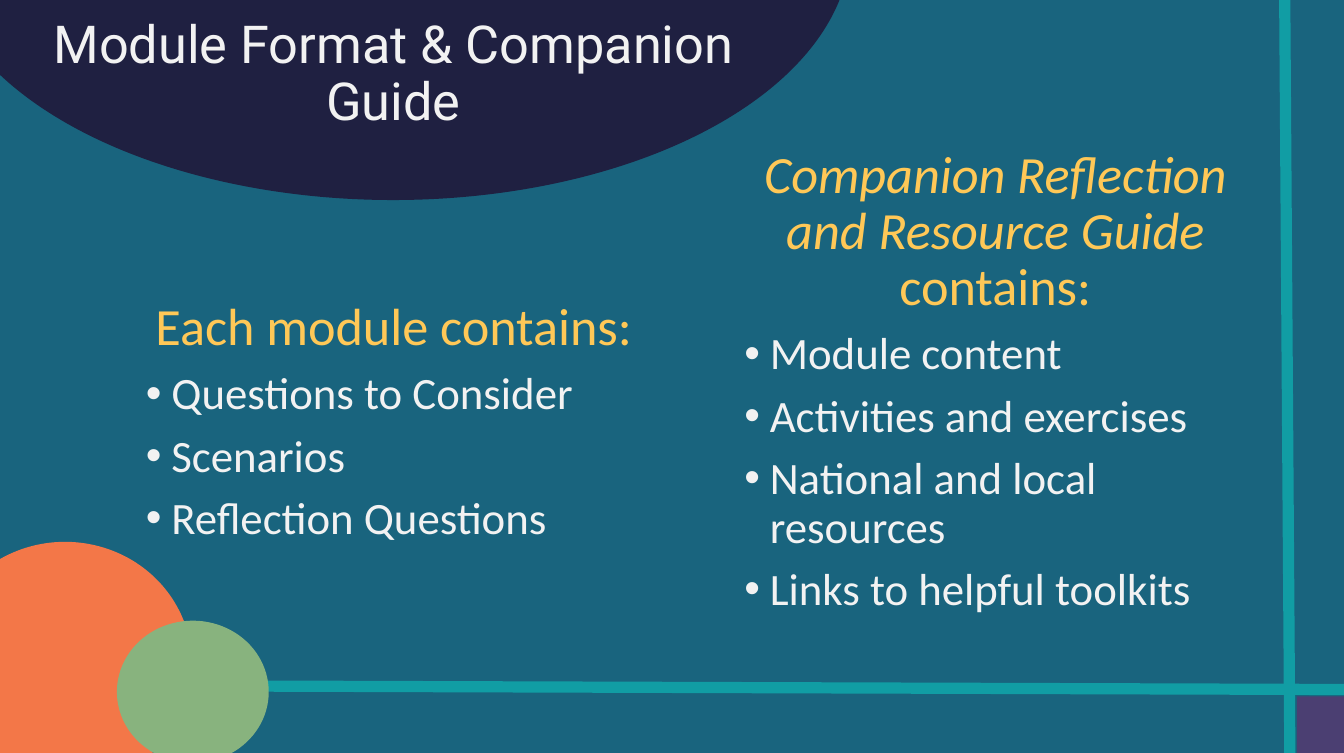
from dataclasses import dataclass

from lxml.etree import SubElement
from pptx import Presentation
from pptx.dml.color import RGBColor
from pptx.enum.shapes import MSO_CONNECTOR, MSO_SHAPE
from pptx.enum.text import MSO_ANCHOR, PP_ALIGN
from pptx.oxml.ns import qn
from pptx.util import Cm, Pt


@dataclass(frozen=True)
class Theme:
    background: str = "19647E"
    line: str = "119DA4"
    navy: str = "1F2041"
    orange: str = "F37748"
    green: str = "88B37E"
    purple: str = "4B3F72"
    heading: str = "FFC857"
    text: str = "F2F2F2"
    title_font: str = "Roboto"
    body_font: str = "Calibri"
    heading_size: int = 28
    body_size: int = 24
    line_width: int = 6


THEME = Theme()


def add_block(slide, kind, box, color):
    sp = slide.shapes.add_shape(kind, *map(Cm, box))
    sp.shadow.inherit = False
    sp.fill.solid()
    sp.fill.fore_color.rgb = RGBColor.from_string(color)
    sp.line.fill.background()


def add_line(slide, start, end):
    points = map(Cm, (*start, *end))
    cxn = slide.shapes.add_connector(MSO_CONNECTOR.STRAIGHT, *points)
    cxn.line.width = Pt(THEME.line_width)
    cxn.line.color.rgb = RGBColor.from_string(THEME.line)
    SubElement(cxn._element.spPr, qn("a:effectLst"))


def add_text_frame(slide, box, anchor=MSO_ANCHOR.TOP):
    tf = slide.shapes.add_textbox(*map(Cm, box)).text_frame
    tf.word_wrap = True
    tf.vertical_anchor = anchor
    return tf


def add_run(p, text, font, size, color, italic=False):
    r = p.add_run()
    r.text = text
    r.font.name = font
    r.font.size = Pt(size)
    r.font.italic = italic
    r.font.color.rgb = RGBColor.from_string(color)


def set_bullet(p):
    pPr = p._p.get_or_add_pPr()
    pPr.set("marL", str(Cm(0.48)))
    pPr.set("indent", str(-Cm(0.48)))
    SubElement(pPr, qn("a:buFont"), typeface="Arial")
    SubElement(pPr, qn("a:buChar"), char="•")


def add_title(slide, box, text):
    p = add_text_frame(slide, box, MSO_ANCHOR.MIDDLE).paragraphs[0]
    p.alignment = PP_ALIGN.CENTER
    p.line_spacing = 0.9
    add_run(p, text, THEME.title_font, THEME.heading_size, THEME.text)


def add_list(slide, box, heading, items):
    tf = add_text_frame(slide, box)
    p = tf.paragraphs[0]
    p.alignment = PP_ALIGN.CENTER
    for text, italic in heading:
        add_run(p, text, THEME.body_font, THEME.heading_size, THEME.heading, italic)
    for item in items:
        p = tf.add_paragraph()
        add_run(p, item, THEME.body_font, THEME.body_size, THEME.text)
    for p in tf.paragraphs:
        p.line_spacing = 0.9
        p.space_before = Pt(7.5)
    for p in tf.paragraphs[1:]:
        set_bullet(p)


def main():
    prs = Presentation()
    prs.slide_width, prs.slide_height = Cm(25.4), Cm(14.23)
    slide = prs.slides.add_slide(prs.slide_layouts[6])
    fill = slide.background.fill
    fill.solid()
    fill.fore_color.rgb = RGBColor.from_string(THEME.background)

    add_line(slide, (24.28, 0), (24.38, 14.83))
    add_block(slide, MSO_SHAPE.OVAL, (-1.22, -5.92, 17.3, 9.7), THEME.navy)
    add_line(slide, (-0.08, 12.95), (25.4, 13.03))

    add_title(slide, (0.36, 0.05, 14.15, 2.74), "Module Format & Companion Guide")
    add_list(
        slide,
        (2.51, 5.56, 9.86, 5.99),
        [("Each module contains:", False)],
        ["Questions to Consider", "Scenarios", "Reflection Questions"],
    )
    add_list(
        slide,
        (13.82, 2.67, 9.98, 9.42),
        [("Companion Reflection and Resource Guide ", True), ("contains:", False)],
        [
            "Module content",
            "Activities and exercises",
            "National and local resources",
            "Links to helpful toolkits",
        ],
    )

    add_block(slide, MSO_SHAPE.OVAL, (-1.17, 10.24, 4.8, 4.62), THEME.orange)
    add_block(slide, MSO_SHAPE.OVAL, (2.21, 11.73, 2.87, 2.69), THEME.green)
    add_block(slide, MSO_SHAPE.RECTANGLE, (24.51, 13.16, 1.27, 1.24), THEME.purple)
    prs.save("out.pptx")


if __name__ == "__main__":
    main()
